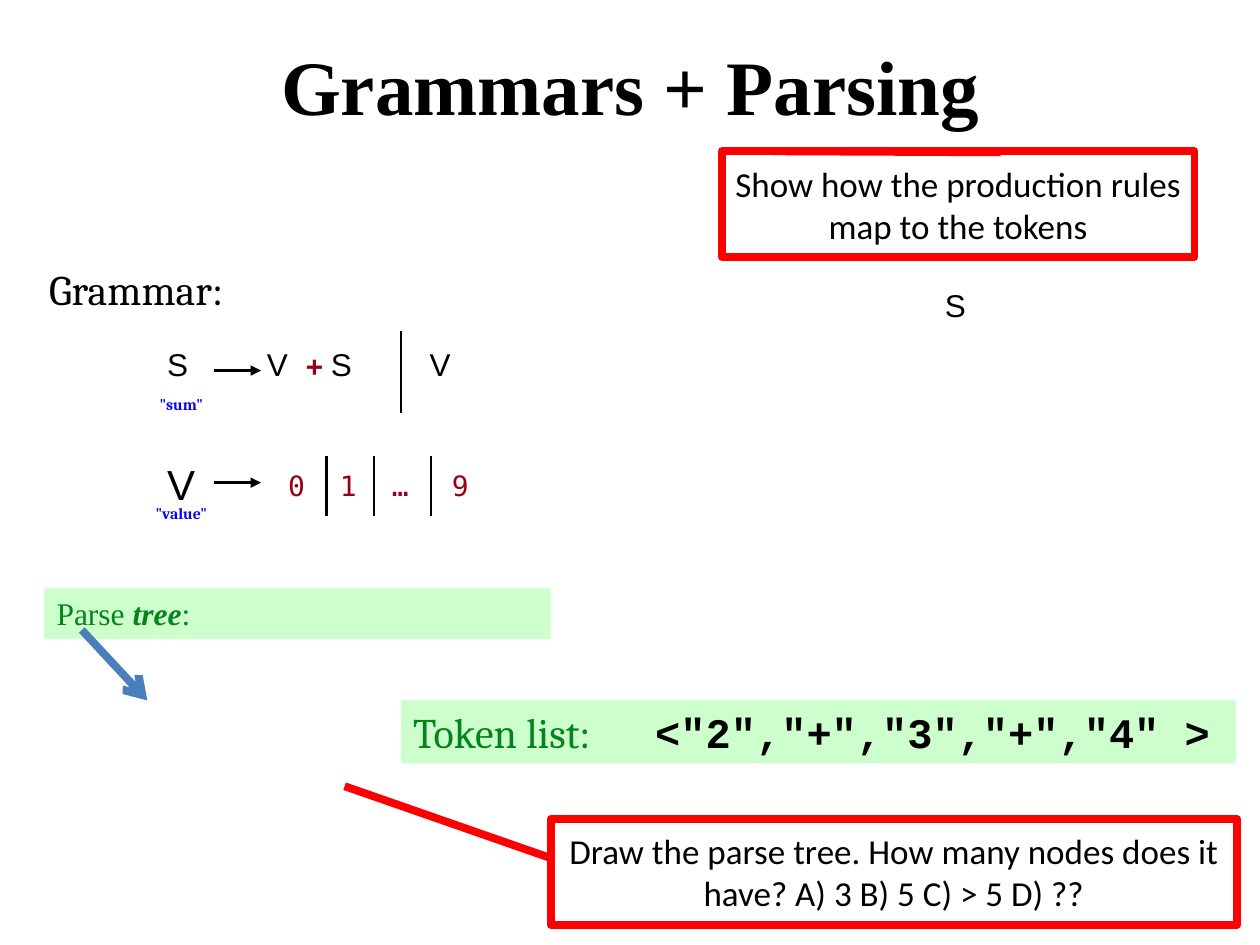
from dataclasses import dataclass
from typing import Optional

from lxml.etree import SubElement
from pptx import Presentation
from pptx.dml.color import RGBColor
from pptx.enum.shapes import MSO_CONNECTOR, MSO_SHAPE
from pptx.enum.text import MSO_ANCHOR, PP_ALIGN
from pptx.oxml.ns import qn
from pptx.util import Cm, Pt

COLORS = {
    "black": "000000",
    "white": "FFFFFF",
    "terminal": "960117",
    "label": "0703F3",
    "heading": "04841C",
    "band": "CCFFCC",
    "pointer": "4B7EBC",
    "alert": "FF0000",
}

FORMATS = {
    "title": {"name": "Times New Roman", "size": Pt(44), "bold": True},
    "section": {"name": "Cambria", "size": Pt(24)},
    "symbol": {"name": "Arial", "size": Pt(18)},
    "large symbol": {"name": "Arial", "size": Pt(24)},
    "terminal": {"name": "DejaVu Sans Mono", "size": Pt(16)},
    "operator": {"name": "DejaVu Sans Mono", "size": Pt(16), "bold": True},
    "label": {"name": "Cambria", "size": Pt(9), "bold": True},
    "parse": {"name": "Times New Roman", "size": Pt(18)},
    "parse stress": {"name": "Times New Roman", "size": Pt(18), "bold": True, "italic": True},
    "tokens": {"name": "Courier New", "size": Pt(24), "bold": True},
    "question": {"name": "Calibri", "size": Pt(20)},
}

CENTERED = {"alignment": PP_ALIGN.CENTER}
TIGHT = {"alignment": PP_ALIGN.CENTER, "line_spacing": 0.8}


@dataclass
class Words:
    text: str
    format: str
    color: str = "black"


@dataclass
class Block:
    box: tuple
    words: list
    layout: Optional[dict] = None
    tabs: tuple = ()
    fill: Optional[str] = None


@dataclass
class Stroke:
    start: tuple
    end: tuple
    color: str = "black"
    width: float = 1.5
    head: Optional[str] = None


@dataclass
class Callout:
    box: tuple
    text: str
    pointer: tuple


def rgb(name: str) -> RGBColor:
    return RGBColor.from_string(COLORS[name])


def apply(target, values: dict) -> None:
    for key, value in values.items():
        setattr(target, key, value)


def write(frame, words: list, layout: Optional[dict] = None, tabs: tuple = ()) -> None:
    frame.word_wrap = True
    paragraph = frame.paragraphs[0]
    apply(paragraph, {"alignment": PP_ALIGN.LEFT, **(layout or {})})
    if tabs:
        stops = SubElement(paragraph._p.get_or_add_pPr(), qn("a:tabLst"))
        for stop in tabs:
            SubElement(stops, qn("a:tab"), pos=str(Cm(stop)), algn="l")
    for part in words:
        run = paragraph.add_run()
        run.text = part.text
        apply(run.font, FORMATS[part.format])
        run.font.color.rgb = rgb(part.color)


def draw_block(shapes, block: Block) -> None:
    box = map(Cm, block.box)
    if block.fill:
        holder = shapes.add_shape(MSO_SHAPE.RECTANGLE, *box)
        holder.shadow.inherit = False
        holder.fill.solid()
        holder.fill.fore_color.rgb = rgb(block.fill)
        holder.line.fill.background()
        holder.text_frame.vertical_anchor = MSO_ANCHOR.TOP
    else:
        holder = shapes.add_textbox(*box)
    write(holder.text_frame, block.words, block.layout, block.tabs)


def draw_stroke(shapes, stroke: Stroke) -> None:
    ends = map(Cm, stroke.start + stroke.end)
    connector = shapes.add_connector(MSO_CONNECTOR.STRAIGHT, *ends)
    connector.line.color.rgb = rgb(stroke.color)
    connector.line.width = Pt(stroke.width)
    if stroke.head:
        SubElement(connector.line._get_or_add_ln(), qn("a:tailEnd"), type=stroke.head)
    SubElement(connector._element.spPr, qn("a:effectLst"))


def draw_callout(shapes, callout: Callout) -> None:
    holder = shapes.add_shape(MSO_SHAPE.LINE_CALLOUT_1, *map(Cm, callout.box))
    holder.shadow.inherit = False
    for index, value in enumerate(callout.pointer):
        holder.adjustments[index] = value
    holder.fill.solid()
    holder.fill.fore_color.rgb = rgb("white")
    holder.line.color.rgb = rgb("alert")
    holder.line.width = Pt(4.5)
    holder.text_frame.vertical_anchor = MSO_ANCHOR.MIDDLE
    write(holder.text_frame, [Words(callout.text, "question")], CENTERED)


TERMINALS = {"0": 5.56, "1": 6.6, "…": 7.65, "9": 8.86}
LABELS = {'"sum"': 7.9, '"value"': 10.11}

BLOCKS = [
    Block((3.12, 6.83, 4.29, 1.02), [Words("S\tV\tS", "symbol")], tabs=(2.01, 3.3)),
    Block((3.12, 9.12, 10.11, 1.27), [Words("V", "large symbol")]),
    Block((8.41, 6.83, 1.07, 1.27), [Words("V", "symbol")]),
    *[Block((left, 9.32, 0.86, 0.94), [Words(digit, "terminal", "terminal")])
      for digit, left in TERMINALS.items()],
    Block((5.92, 6.91, 0.86, 0.94), [Words("+", "operator", "terminal")]),
    *[Block((2.59, top, 2.13, 0.56), [Words(label, "label", "label")], TIGHT)
      for label, top in LABELS.items()],
    Block((1.9, 0.66, 21.62, 2.11), [Words("Grammars + Parsing", "title")], CENTERED),
    Block((0.74, 5.18, 5.03, 1.27), [Words("Grammar:", "section")]),
    Block((0.89, 11.86, 10.21, 1.02),
          [Words("Parse ", "parse", "heading"), Words("tree", "parse stress", "heading"),
           Words(":", "parse", "heading")], fill="band"),
    Block((8.08, 14.12, 16.84, 1.27),
          [Words("Token list:\t", "section", "heading"),
           Words('<"2","+","3","+","4" >', "tokens")], tabs=(4.88,), fill="band"),
    Block((18.8, 5.64, 1.07, 1.27), [Words("S", "symbol")]),
]

STROKES = [
    *[Stroke((4.32, y), (5.26, y), head="triangle") for y in (7.47, 9.73)],
    Stroke((8.08, 6.68), (8.08, 8.33)),
    *[Stroke((x, 9.19), (x, 10.41)) for x in (6.58, 7.54, 8.69)],
    Stroke((1.65, 12.7), (2.97, 14.12), "pointer", 4.5, "arrow"),
]

CALLOUTS = [
    Callout((14.55, 3.05, 9.53, 2.13), "Show how the production rules map to the tokens",
            (0.01, 0.59, 0, 0.11)),
    Callout((11.1, 16.51, 13.84, 2.13),
            "Draw the parse tree. How many nodes does it have? A) 3 B) 5 C) > 5 D) ??",
            (-0.31, -0.3, 0.37, 0)),
]


def main() -> None:
    deck = Presentation()
    apply(deck, {"slide_width": Cm(25.4), "slide_height": Cm(19.05)})
    shapes = deck.slides.add_slide(deck.slide_layouts[6]).shapes
    for block in BLOCKS:
        draw_block(shapes, block)
    for stroke in STROKES:
        draw_stroke(shapes, stroke)
    for callout in CALLOUTS:
        draw_callout(shapes, callout)
    deck.save("out.pptx")


if __name__ == "__main__":
    main()
